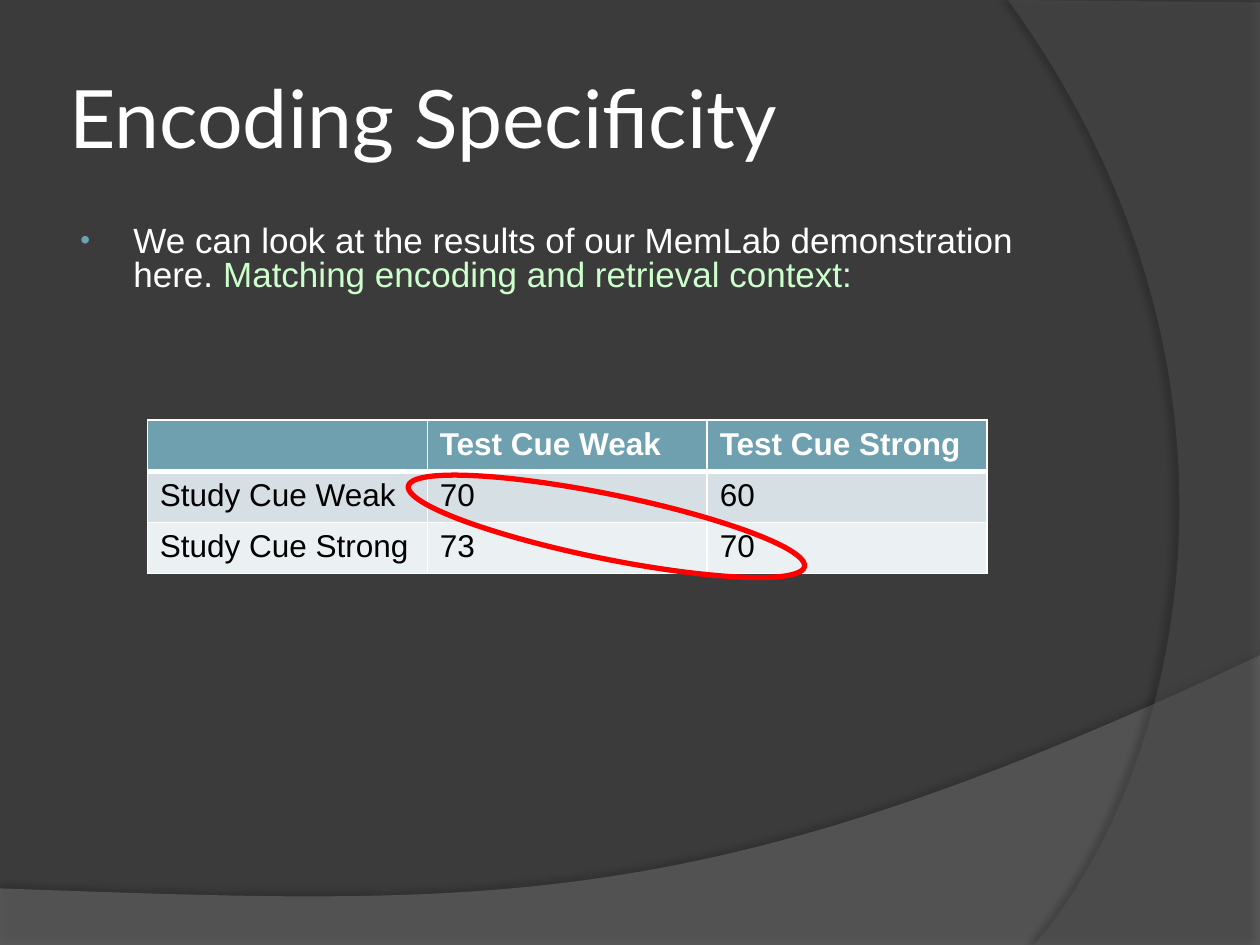
from collections import namedtuple
from dataclasses import dataclass

from lxml.etree import SubElement
from pptx import Presentation
from pptx.dml.color import RGBColor
from pptx.enum.shapes import MSO_SHAPE as Shape
from pptx.enum.text import MSO_ANCHOR as Anchor
from pptx.oxml.ns import qn
from pptx.util import Cm, Pt

Box = namedtuple("Box", "left top width height")


@dataclass(frozen=True)
class Theme:
    background: str = "3B3B3B"
    wave: str = "7C7C7C"
    arc: str = "595959"
    light: str = "FFFFFF"
    dark: str = "000000"
    accent: str = "6EA0B0"
    highlight: str = "CCFFCC"
    mark: str = "FF0000"
    row_fills: tuple = ("6EA0B0", "D5DFE4", "EBF0F2")
    heading_font: str = "Lato"
    body_font: str = "Arial"
    title_size: int = 46
    body_size: int = 20
    table_size: int = 18


THEME = Theme()
RESULTS = [
    ("", "Test Cue Weak", "Test Cue Strong"),
    ("Study Cue Weak", "70", "60"),
    ("Study Cue Strong", "73", "70"),
]


def rgb(color):
    return RGBColor.from_string(color)


def lengths(box):
    return [Cm(value) for value in box]


def add_xml(parent, tag, **attributes):
    return SubElement(parent, qn(tag), {k: str(v) for k, v in attributes.items()})


def add_color(parent, color, alpha=100):
    srgb = add_xml(parent, "a:srgbClr", val=color)
    if alpha < 100:
        add_xml(srgb, "a:alpha", val=alpha * 1000)


def style_font(target, name, size, color, bold=False):
    font = target.font
    font.name, font.size, font.bold = name, Pt(size), bold
    font.color.rgb = rgb(color)


def bezier(start, control1, control2, end, steps=60):
    """Return points along a cubic curve, both ends included."""
    points = []
    for step in range(steps + 1):
        t = step / steps
        weights = ((1 - t) ** 3, 3 * t * (1 - t) ** 2, 3 * t * t * (1 - t), t ** 3)
        points.append(tuple(
            sum(w * value for w, value in zip(weights, axis))
            for axis in zip(start, control1, control2, end)))
    return points


def add_backdrop(slide, box, outline, color, alpha, shadow_alpha, distance, direction):
    """Draw a translucent area whose outline is relative to the box, with a soft edge."""
    points = [(Cm(box.left + x), Cm(box.top + y)) for x, y in outline]
    builder = slide.shapes.build_freeform(*points[0], scale=1.0)
    builder.add_line_segments(points[1:], close=True)
    area = builder.convert_to_shape()
    area.line.fill.background()
    area.fill.solid()
    area.fill.fore_color.rgb = rgb(color)
    properties = area._element.spPr
    fill_color = properties.find(qn("a:solidFill")).find(qn("a:srgbClr"))
    add_xml(fill_color, "a:alpha", val=alpha * 1000)
    shadow = add_xml(add_xml(properties, "a:effectLst"), "a:outerShdw",
                     blurRad=Pt(4), dist=Pt(distance), dir=direction * 60000,
                     algn="ctr", rotWithShape=0)
    add_color(shadow, "000000", shadow_alpha)


def add_wave(slide, box):
    bottom, edge = box.height, box.width
    curve = bezier((edge, 0), (14.2, 5.31), (9.93, 5.05), (0, 4.7))
    add_backdrop(slide, box, [(0, bottom), (edge, bottom)] + curve,
                 THEME.wave, 45, 35, 3.5, 270)


def add_arc(slide, box):
    bottom, edge = box.height, box.width
    curve = bezier((0.53, bottom), (3.43, 15.72), (5.54, 7.62), (0, 0))
    add_backdrop(slide, box, [(edge, 0.05), (edge, bottom)] + curve,
                 THEME.arc, 40, 45, 4, 180)


def add_title(slide, box):
    frame = slide.shapes.add_textbox(*lengths(box)).text_frame
    frame.word_wrap = True
    frame.vertical_anchor = Anchor.MIDDLE
    frame.margin_left = frame.margin_right = Cm(0.13)
    title = frame.paragraphs[0]
    title.text = "Encoding Specificity"
    style_font(title, THEME.heading_font, THEME.title_size, THEME.light)


def add_body(slide, box):
    frame = slide.shapes.add_textbox(*lengths(box)).text_frame
    frame.word_wrap = True
    point = frame.paragraphs[0]
    point.line_spacing = 0.8
    point.space_before = Pt(4)
    properties = point._p.get_or_add_pPr()
    properties.set("marL", str(Cm(1.17)))
    properties.set("indent", str(Cm(-1.07)))
    add_color(add_xml(properties, "a:buClr"), THEME.accent)
    add_xml(properties, "a:buSzPct", val=80000)
    add_xml(properties, "a:buFont", typeface=THEME.body_font)
    add_xml(properties, "a:buChar", char="•")
    for text, color in (
        ("We can look at the results of our MemLab demonstration here. ", THEME.light),
        ("Matching encoding and retrieval context:", THEME.highlight),
    ):
        run = point.add_run()
        run.text = text
        style_font(run, THEME.body_font, THEME.body_size, color)


def add_borders(cell, top, bottom):
    properties = cell._tc.get_or_add_tcPr()
    for side, width in (("L", 1), ("R", 1), ("T", top), ("B", bottom)):
        border = add_xml(properties, f"a:ln{side}", w=Pt(width))
        add_color(add_xml(border, "a:solidFill"), THEME.light)


def add_results(slide, box):
    rows, columns = len(RESULTS), len(RESULTS[0])
    table = slide.shapes.add_table(rows, columns, *lengths(box)).table
    for r, texts in enumerate(RESULTS):
        header = r == 0
        for c, text in enumerate(texts):
            cell = table.cell(r, c)
            add_borders(cell, top=3 if r == 1 else 1, bottom=3 if header else 1)
            cell.fill.solid()
            cell.fill.fore_color.rgb = rgb(THEME.row_fills[r])
            entry = cell.text_frame.paragraphs[0]
            entry.text = text
            style_font(entry, THEME.body_font, THEME.table_size,
                       THEME.light if header else THEME.dark, bold=header)


def add_match_ring(slide, box):
    """Circle the diagonal where study and test cues match."""
    ring = slide.shapes.add_shape(Shape.OVAL, *lengths(box))
    ring.shadow.inherit = False
    ring.rotation = 11.5
    ring.fill.background()
    ring.line.color.rgb = rgb(THEME.mark)
    ring.line.width = Pt(3)


def main():
    deck = Presentation()
    deck.slide_width, deck.slide_height = Cm(25.4), Cm(19.05)
    slide = deck.slides.add_slide(deck.slide_layouts[6])
    slide.background.fill.solid()
    slide.background.fill.fore_color.rgb = rgb(THEME.background)
    add_wave(slide, Box(0, 13.21, 25.4, 5.87))
    add_arc(slide, Box(20.32, 0, 5.08, 19.05))
    add_title(slide, Box(1.27, 0.76, 20.75, 3.18))
    add_body(slide, Box(1.27, 4.45, 20.75, 12.57))
    add_results(slide, Box(2.97, 8.47, 16.93, 3.09))
    add_match_ring(slide, Box(8.15, 9.96, 8.15, 1.3))
    deck.save("out.pptx")


if __name__ == "__main__":
    main()
